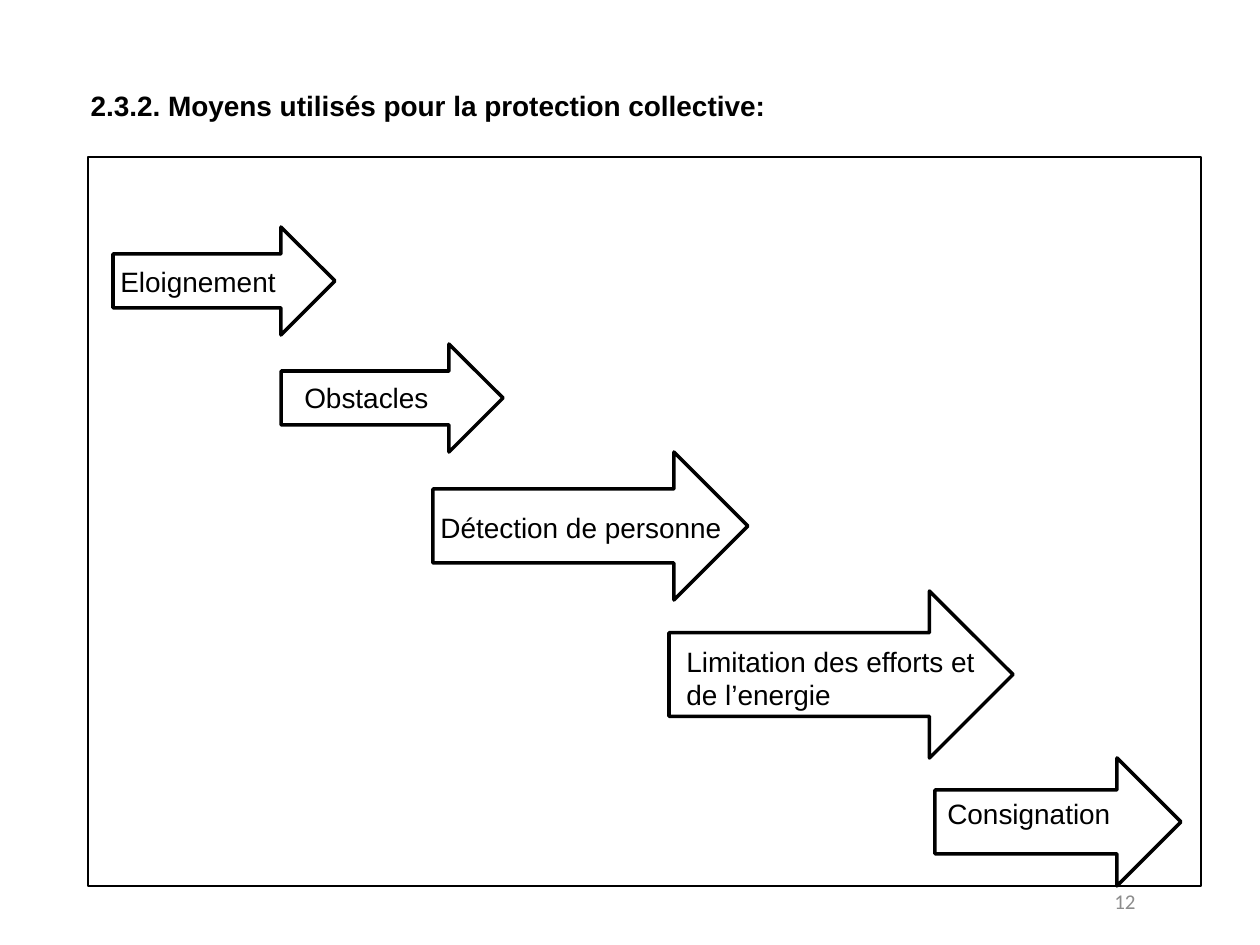
from dataclasses import dataclass

from pptx import Presentation
from pptx.dml.color import RGBColor
from pptx.enum.shapes import MSO_SHAPE
from pptx.enum.text import MSO_ANCHOR, MSO_AUTO_SIZE, PP_ALIGN
from pptx.util import Emu, Pt

PX_PER_INCH = 126


@dataclass(frozen=True)
class Theme:
    """Colours, fonts and type sizes of the slide."""

    ink: RGBColor = RGBColor(0, 0, 0)
    muted: RGBColor = RGBColor(0x8C, 0x8C, 0x8C)
    font: str = "Arial"
    number_font: str = "Calibri"
    body_size: int = 16
    number_size: int = 12
    frame_line: int = 1
    arrow_line: int = 2


THEME = Theme()

STEPS = [
    ("Eloignement", (108, 258, 183, 47), (113, 227, 222, 108), False),
    ("Obstacles", (292, 374, 151, 47), (281, 344, 222, 108), False),
    ("Détection de personne", (428, 504, 310, 47), (433, 452, 315, 148), False),
    ("Limitation des efforts et de l’energie", (674, 638, 320, 81), (669, 591, 344, 167), True),
    ("Consignation", (935, 790, 217, 47), (935, 758, 246, 128), True),
]


def px(length):
    """Turn a length in pixels into EMU."""
    return Emu(round(length * 914400 / PX_PER_INCH))


def place(shape, box):
    """Move and size a shape to a pixel box."""
    shape.left, shape.top, shape.width, shape.height = map(px, box)


def write(shape, text, *, size=THEME.body_size, font=THEME.font, color=THEME.ink,
          bold=False, align=PP_ALIGN.LEFT, anchor=MSO_ANCHOR.TOP, wrap=True):
    """Put one formatted paragraph into a shape."""
    frame = shape.text_frame
    frame.auto_size = MSO_AUTO_SIZE.NONE
    frame.word_wrap = wrap
    frame.vertical_anchor = anchor
    paragraph = frame.paragraphs[0]
    paragraph.alignment = align
    run = paragraph.add_run()
    run.text = text
    run.font.size = Pt(size)
    run.font.name = font
    run.font.bold = bold
    run.font.color.rgb = color


def add_title(slide, text, box):
    """Place and fill the title placeholder."""
    title = slide.shapes.title
    place(title, box)
    write(title, text, bold=True)


def add_text(slide, text, box, **style):
    """Add a text box."""
    write(slide.shapes.add_textbox(*map(px, box)), text, **style)


def add_outline(slide, kind, box, line_width):
    """Add an unfilled preset shape with a black outline."""
    shape = slide.shapes.add_shape(kind, *map(px, box))
    shape.shadow.inherit = False
    shape.fill.background()
    shape.line.color.rgb = THEME.ink
    shape.line.width = Pt(line_width)


def main():
    """Build the slide and save it."""
    presentation = Presentation()
    presentation.slide_width, presentation.slide_height = px(1260), px(945)
    slide = presentation.slides.add_slide(presentation.slide_layouts[5])

    add_title(slide, "2.3.2. Moyens utilisés pour la protection collective:", (78, 82, 788, 47))
    add_outline(slide, MSO_SHAPE.RECTANGLE, (88, 157, 1113, 729), THEME.frame_line)
    for label, label_box, arrow_box, wrap in STEPS:
        add_outline(slide, MSO_SHAPE.RIGHT_ARROW, arrow_box, THEME.arrow_line)
        add_text(slide, label, label_box, wrap=wrap)
    add_text(slide, "12", (854, 876, 294, 50), size=THEME.number_size, font=THEME.number_font,
             color=THEME.muted, align=PP_ALIGN.RIGHT, anchor=MSO_ANCHOR.MIDDLE)

    presentation.save("out.pptx")


if __name__ == "__main__":
    main()
